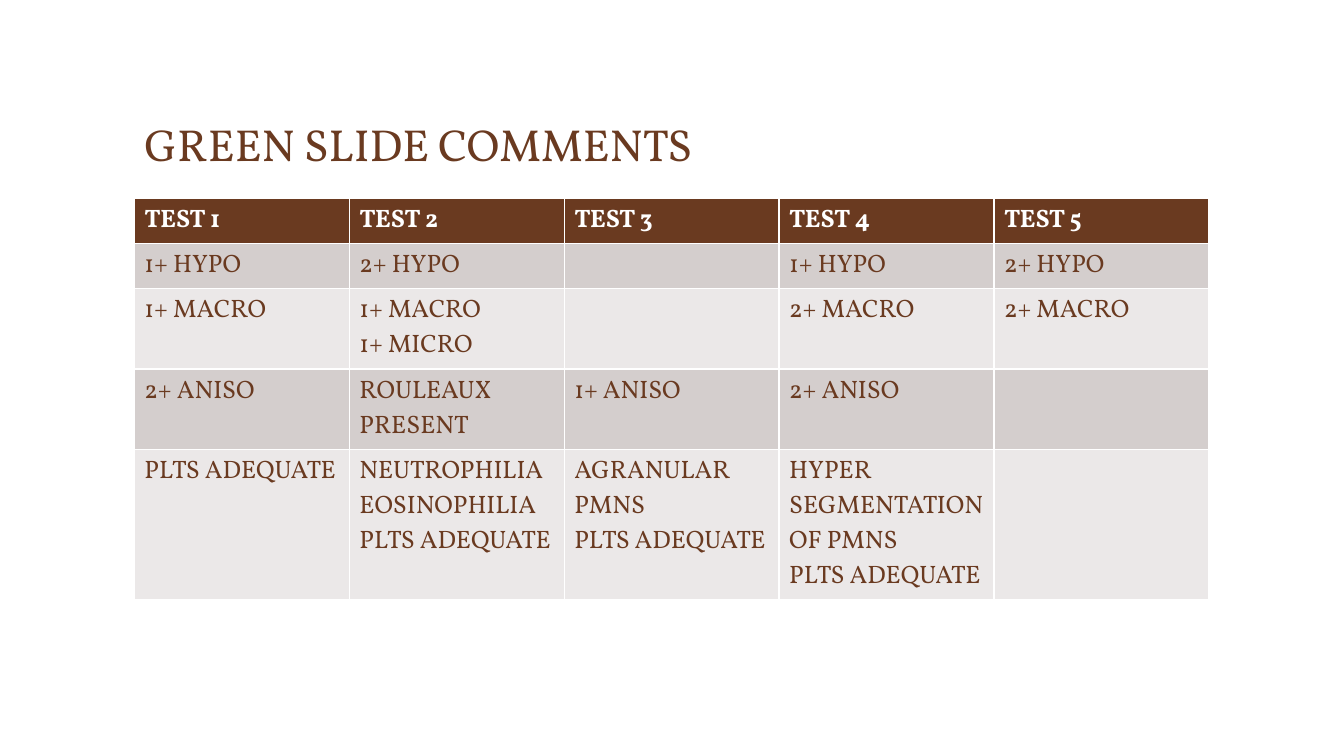
import pptx
import pptx.util
import pptx.dml.color
import pptx.enum.text

Pt = pptx.util.Pt
RGBColor = pptx.dml.color.RGBColor

TITLE = "GREEN SLIDE COMMENTS"
COMMENTS = [
    ["TEST 1", "TEST 2", "TEST 3", "TEST 4", "TEST 5"],
    ["1+ HYPO", "2+ HYPO", "", "1+ HYPO", "2+ HYPO"],
    ["1+ MACRO", "1+ MACRO\n1+ MICRO", "", "2+ MACRO", "2+ MACRO"],
    ["2+ ANISO", "ROULEAUX PRESENT", "1+ ANISO", "2+ ANISO", ""],
    [
        "PLTS ADEQUATE",
        "NEUTROPHILIA\nEOSINOPHILIA\nPLTS ADEQUATE",
        "AGRANULAR PMNS\nPLTS ADEQUATE",
        "HYPER SEGMENTATION OF PMNS\nPLTS ADEQUATE",
        "",
    ],
]

FONT = "Vollkorn"
BROWN = RGBColor(0x6A, 0x3A, 0x20)
WHITE = RGBColor(0xFF, 0xFF, 0xFF)
DARK_BAND = RGBColor(0xD4, 0xCE, 0xCD)
LIGHT_BAND = RGBColor(0xEB, 0xE8, 0xE8)

LEFT, WIDTH = 96, 767.5
TITLE_TOP, TITLE_HEIGHT = 34, 92
TABLE_TOP, ROW_HEIGHT = 141.5, 29.5


def style_text(frame, size, color, bold):
    for para in frame.paragraphs:
        para.font.size = Pt(size)
        for span in para.runs:
            span.font.name = FONT
            span.font.size = Pt(size)
            span.font.bold = bold
            span.font.color.rgb = color


def add_title(page):
    title = page.shapes.title
    title.left, title.top = Pt(LEFT), Pt(TITLE_TOP)
    title.width, title.height = Pt(WIDTH), Pt(TITLE_HEIGHT)
    frame = title.text_frame
    frame.text = TITLE
    frame.vertical_anchor = pptx.enum.text.MSO_ANCHOR.BOTTOM
    frame.paragraphs[0].alignment = pptx.enum.text.PP_ALIGN.LEFT
    frame.paragraphs[0].line_spacing = 0.9
    style_text(frame, 32, BROWN, False)


def add_comments(page):
    row_count, column_count = len(COMMENTS), len(COMMENTS[0])
    table = page.shapes.add_table(
        row_count, column_count, Pt(LEFT), Pt(TABLE_TOP),
        Pt(WIDTH), Pt(ROW_HEIGHT * row_count),
    ).table
    for column in table.columns:
        column.width = Pt(WIDTH / column_count)
    for row_index, entries in enumerate(COMMENTS):
        header = row_index == 0
        band = DARK_BAND if row_index % 2 else LIGHT_BAND
        for column_index, entry in enumerate(entries):
            cell = table.cell(row_index, column_index)
            cell.fill.solid()
            cell.fill.fore_color.rgb = BROWN if header else band
            cell.text_frame.text = entry
            style_text(cell.text_frame, 18, WHITE if header else BROWN, header)


def main():
    deck = pptx.Presentation()
    deck.slide_width, deck.slide_height = Pt(960), Pt(540)
    page = deck.slides.add_slide(deck.slide_layouts[5])
    add_title(page)
    add_comments(page)
    deck.save("out.pptx")


if __name__ == "__main__":
    main()
